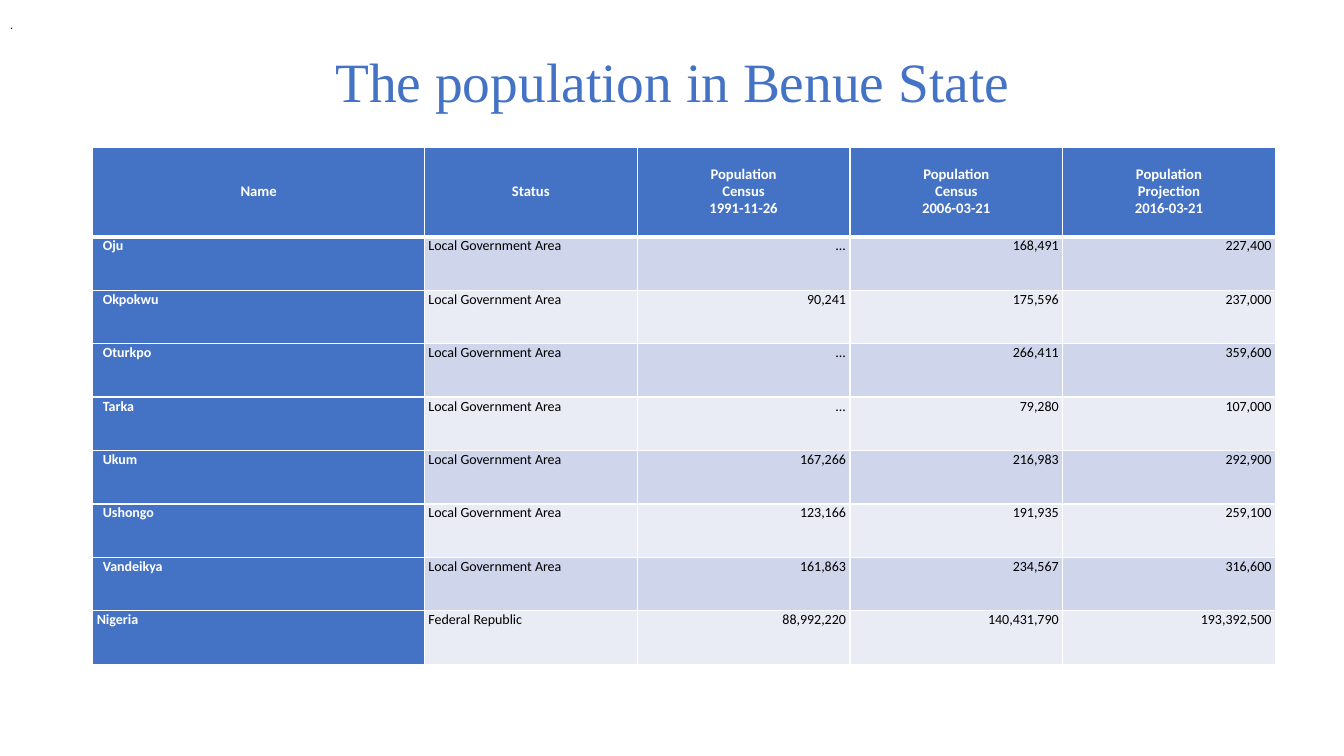
import pptx
import pptx.dml.color
import pptx.enum.text
import pptx.oxml
import pptx.oxml.ns
import pptx.util

PX = 9144
COLORS = {"blue": "4472C4", "band": "CFD5EA", "light": "E9EBF5", "white": "FFFFFF", "black": "000000"}
ALIGN = pptx.enum.text.PP_ALIGN
ANCHOR = pptx.enum.text.MSO_ANCHOR
HEADERS = ["Name", "Status", "Population\nCensus\n1991-11-26", "Population\nCensus\n2006-03-21",
           "Population\nProjection\n2016-03-21"]
AREAS = [
    ("Oju", "...", "168,491", "227,400"),
    ("Okpokwu", "90,241", "175,596", "237,000"),
    ("Oturkpo", "...", "266,411", "359,600"),
    ("Tarka", "...", "79,280", "107,000"),
    ("Ukum", "167,266", "216,983", "292,900"),
    ("Ushongo", "123,166", "191,935", "259,100"),
    ("Vandeikya", "161,863", "234,567", "316,600"),
]
rows = [HEADERS]
rows += [(name, "Local Government Area", *counts) for name, *counts in AREAS]
rows.append(("Nigeria", "Federal Republic", "88,992,220", "140,431,790", "193,392,500"))


def style_font(p, name, size, color, bold=False):
    p.font.name = name
    p.font.size = pptx.util.Pt(size)
    p.font.bold = bold
    p.font.color.rgb = pptx.dml.color.RGBColor.from_string(COLORS[color])


def add_borders(cell, widths):
    for i, (side, width) in enumerate(widths.items()):
        ln = pptx.oxml.parse_xml(
            f'<a:ln{side} {pptx.oxml.ns.nsdecls("a")} w="{pptx.util.Pt(width)}"><a:solidFill>'
            f'<a:srgbClr val="{COLORS["white"]}"/></a:solidFill></a:ln{side}>')
        cell._tc.get_or_add_tcPr().insert(i, ln)


prs = pptx.Presentation()
prs.slide_width = 1333 * PX
prs.slide_height = 750 * PX
s = prs.slides.add_slide(prs.slide_layouts[5])

title = s.shapes.title
title.left, title.top, title.width, title.height = 92 * PX, 49 * PX, 1150 * PX, 70 * PX
tf = title.text_frame
tf.vertical_anchor = ANCHOR.MIDDLE
p = tf.paragraphs[0]
p.text = "The population in Benue State"
p.alignment = ALIGN.CENTER
p.line_spacing = 0.9
style_font(p, "Times New Roman", 39.6, "blue")

dot = s.shapes.add_textbox(0, 12 * PX, 24 * PX, 25 * PX)
tf = dot.text_frame
tf.word_wrap = False
tf.vertical_anchor = ANCHOR.MIDDLE
p = tf.paragraphs[0]
p.text = "."
style_font(p, "Arial", 9, "black")

table = s.shapes.add_table(len(rows), len(HEADERS), 92 * PX, 146 * PX, 1173 * PX, 511 * PX).table
table.horz_banding = False
for c, column in enumerate(table.columns):
    column.width = (211 if c else 329) * PX
for r, values in enumerate(rows):
    header = r == 0
    table.rows[r].height = (89 if header else 53) * PX
    for c, value in enumerate(values):
        cell = table.cell(r, c)
        label = header or c == 0
        fill = "blue" if label else "band" if r % 2 else "light"
        cell.fill.solid()
        cell.fill.fore_color.rgb = pptx.dml.color.RGBColor.from_string(COLORS[fill])
        add_borders(cell, {"L": 1, "R": 1, "T": 3 if r == 1 else 1, "B": 3 if header else 1})
        indented = c == 0 and 0 < r <= len(AREAS)
        cell.margin_left = (10 if indented else 3 if header else 4) * PX
        cell.margin_right = (3 if header else 4) * PX
        cell.margin_top = cell.margin_bottom = (4 if header else 2) * PX
        cell.vertical_anchor = ANCHOR.MIDDLE if header else ANCHOR.TOP
        p = cell.text_frame.paragraphs[0]
        p.text = value
        p.alignment = ALIGN.CENTER if header else ALIGN.RIGHT if c > 1 else ALIGN.LEFT
        p.line_spacing = pptx.util.Pt(12 if header else 11.2)
        p.space_before = pptx.util.Pt(7.5)
        p.space_after = pptx.util.Pt(6)
        style_font(p, "Calibri", 10.5 if header else 10, "white" if label else "black", label)

prs.save("out.pptx")
